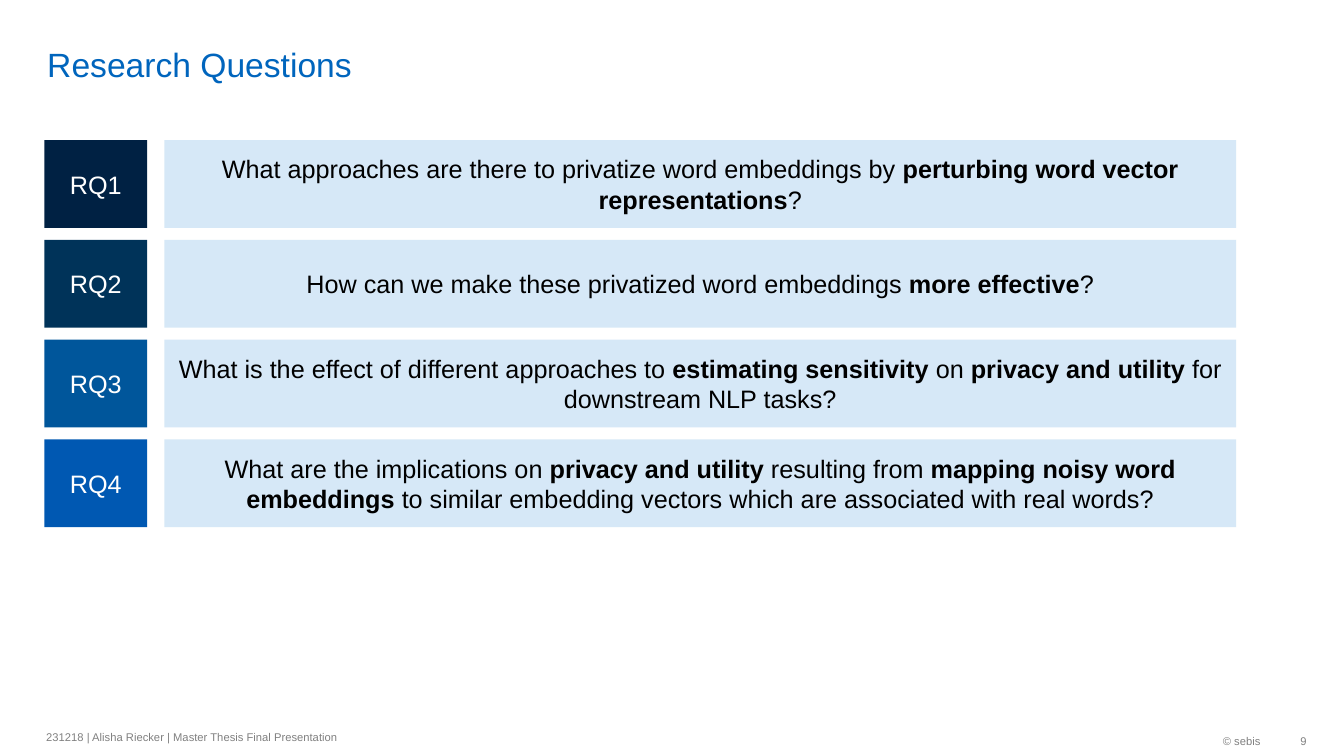
from dataclasses import dataclass

from pptx import Presentation
from pptx.dml.color import RGBColor
from pptx.enum.shapes import MSO_SHAPE as Shape
from pptx.enum.text import MSO_ANCHOR as Anchor, PP_ALIGN as Align
from pptx.util import Inches, Pt


@dataclass(frozen=True)
class Theme:
    font: str = "Arial"
    title: str = "0065BD"
    panel: str = "D6E8F7"
    ink: str = "000000"
    light: str = "FFFFFF"
    muted: str = "808080"
    tags: tuple = ("002143", "003359", "00569B", "0058B2")
    head: int = 24
    body: int = 18
    small: int = 8


THEME = Theme()

QUESTIONS = (
    "What approaches are there to privatize word embeddings by "
    "**perturbing word vector representations**?",
    "How can we make these privatized word embeddings **more effective**?",
    "What is the effect of different approaches to **estimating sensitivity** on "
    "**privacy and utility **for downstream NLP tasks?",
    "What are the implications on **privacy and utility **resulting from "
    "**mapping noisy word embeddings** to similar embedding vectors "
    "which are associated with real words?",
)


def write(shape, text, size=THEME.body, color=THEME.ink, align=Align.LEFT,
          anchor=Anchor.MIDDLE, pad=(0.1, 0.05, 0.1, 0.05)):
    """Fill a shape with text; parts between double asterisks are bold."""
    frame = shape.text_frame
    frame.word_wrap = True
    frame.vertical_anchor = anchor
    (frame.margin_left, frame.margin_top,
     frame.margin_right, frame.margin_bottom) = map(Inches, pad)
    para = frame.paragraphs[0]
    para.alignment = align
    for i, part in enumerate(text.split("**")):
        if part:
            run = para.add_run()
            run.text = part
            run.font.name = THEME.font
            run.font.size = Pt(size)
            run.font.bold = i % 2 == 1
            run.font.color.rgb = RGBColor.from_string(color)


def label(slide, box, text, **style):
    write(slide.shapes.add_textbox(*map(Inches, box)), text, **style)


def block(slide, box, text, fill, color):
    shape = slide.shapes.add_shape(Shape.RECTANGLE, *map(Inches, box))
    shape.shadow.inherit = False
    shape.fill.solid()
    shape.fill.fore_color.rgb = RGBColor.from_string(fill)
    shape.line.fill.background()
    write(shape, text, color=color, align=Align.CENTER)


def rows(slide, box, tag=1.02, gap=0.17, space=0.12):
    """Stack one tag and one question panel per row."""
    left, top, width, height = box
    count = len(QUESTIONS)
    high = (height - space * (count - 1)) / count
    shift = tag + gap
    for i, (text, fill) in enumerate(zip(QUESTIONS, THEME.tags)):
        y = top + i * (high + space)
        block(slide, (left + shift, y, width - shift, high), text,
              THEME.panel, THEME.ink)
        block(slide, (left, y, tag, high), f"RQ{i + 1}", fill, THEME.light)


def footer(slide, box):
    left, top, width, height = box
    style = {"size": THEME.small, "color": THEME.muted}
    page = 0.36
    end = left + width - page
    label(slide, (left, top, 6.38, 0.27),
          "231218 | Alisha Riecker | Master Thesis Final Presentation", **style)
    label(slide, (end - 2.34, top + 0.01, 2.34, height), "© sebis",
          align=Align.RIGHT, **style)
    label(slide, (end, top + 0.01, page, height), "9", align=Align.RIGHT,
          pad=(0.1, 0.05, 0, 0.05), **style)


def main():
    deck = Presentation()
    deck.slide_width, deck.slide_height = Inches(13.33), Inches(7.5)
    slide = deck.slides.add_slide(deck.slide_layouts[6])
    label(slide, (0.37, 0.05, 11.58, 0.79), "Research Questions",
          size=THEME.head, color=THEME.title, anchor=Anchor.BOTTOM,
          pad=(0.1, 0, 0.1, 0))
    rows(slide, (0.44, 1.39, 11.82, 3.84))
    footer(slide, (0.36, 7.18, 12.6, 0.32))
    deck.save("out.pptx")


if __name__ == "__main__":
    main()
